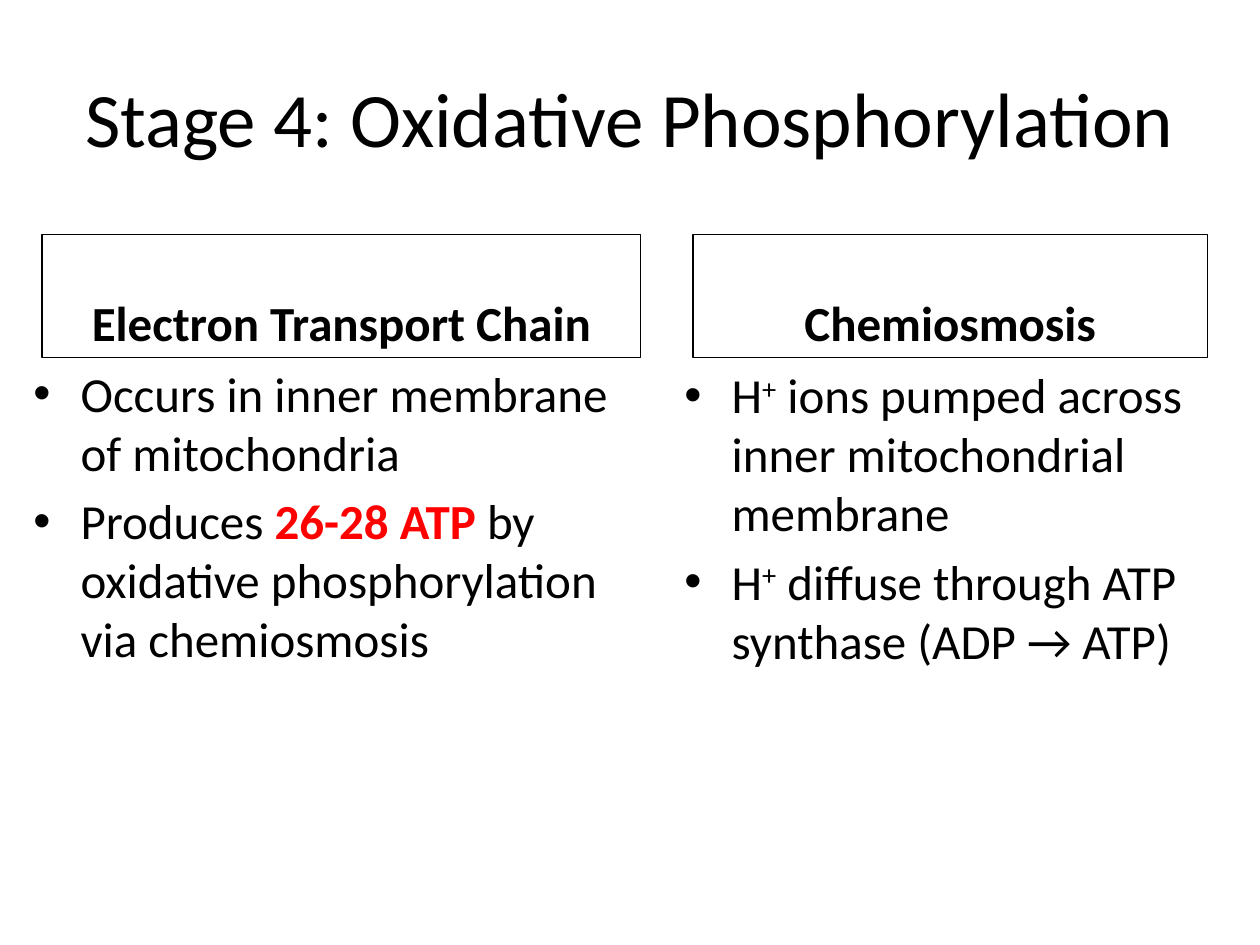
from dataclasses import dataclass

from lxml import etree
from pptx import Presentation
from pptx.dml.color import RGBColor
from pptx.enum.shapes import MSO_SHAPE
from pptx.enum.text import MSO_ANCHOR, PP_ALIGN
from pptx.oxml.ns import qn
from pptx.util import Pt

RECTANGLE = MSO_SHAPE.RECTANGLE
TOP, MIDDLE, BOTTOM = MSO_ANCHOR.TOP, MSO_ANCHOR.MIDDLE, MSO_ANCHOR.BOTTOM
LEFT, CENTER = PP_ALIGN.LEFT, PP_ALIGN.CENTER


@dataclass(frozen=True)
class Theme:
    font: str = "Calibri"
    bullet_font: str = "Arial"
    ink: RGBColor = RGBColor(0, 0, 0)
    accent: RGBColor = RGBColor(255, 0, 0)
    title_size: float = 44
    body_size: float = 28
    paragraph_gap: float = 5.6
    bullet_indent: float = 27
    border: float = 0.75


THEME = Theme()
PLAIN = {}
STRONG = {"bold": True}
HIGHLIGHT = {"bold": True, "color": THEME.accent}
SUPERSCRIPT = {"baseline": 30000}


def apply(target, formats):
    for name, value in formats.items():
        setattr(target, name, value)


def set_frame(frame, anchor):
    apply(frame, {
        "word_wrap": True, "vertical_anchor": anchor,
        "margin_left": Pt(7.2), "margin_right": Pt(7.2),
        "margin_top": Pt(3.6), "margin_bottom": Pt(3.6),
    })


def write_paragraph(paragraph, runs, size, align=LEFT, gap=0):
    apply(paragraph, {"alignment": align, "space_before": Pt(gap)})
    for words, style in runs:
        run = paragraph.add_run()
        run.text = words
        apply(run.font, {"name": THEME.font, "size": Pt(size),
                         "bold": style.get("bold", False)})
        run.font.color.rgb = style.get("color", THEME.ink)
        if "baseline" in style:
            run.font._element.set("baseline", str(style["baseline"]))


def add_bullet(paragraph):
    properties = paragraph._p.get_or_add_pPr()
    indent = Pt(THEME.bullet_indent)
    properties.set("marL", str(indent))
    properties.set("indent", str(-indent))
    etree.SubElement(properties, qn("a:buFont"), typeface=THEME.bullet_font)
    etree.SubElement(properties, qn("a:buChar"), char="•")


def add_title(slide, box, words):
    title = slide.shapes.add_textbox(*map(Pt, box)).text_frame
    set_frame(title, MIDDLE)
    write_paragraph(title.paragraphs[0], [(words, PLAIN)], THEME.title_size, CENTER)


def add_heading(slide, box, words):
    heading = slide.shapes.add_shape(RECTANGLE, *map(Pt, box))
    heading.shadow.inherit = False
    heading.fill.background()
    heading.line.color.rgb = THEME.ink
    heading.line.width = Pt(THEME.border)
    set_frame(heading.text_frame, BOTTOM)
    write_paragraph(heading.text_frame.paragraphs[0], [(words, STRONG)],
                    THEME.body_size, CENTER, THEME.paragraph_gap)


def add_points(slide, box, points):
    body = slide.shapes.add_textbox(*map(Pt, box)).text_frame
    set_frame(body, TOP)
    for index, runs in enumerate(points):
        paragraph = body.add_paragraph() if index else body.paragraphs[0]
        write_paragraph(paragraph, runs, THEME.body_size, gap=THEME.paragraph_gap)
        add_bullet(paragraph)


def add_column(slide, box, heading_width, body_offset, heading, points):
    left, top, width, height = box
    add_heading(slide, (left + 12, top, heading_width, 70.2), heading)
    add_points(slide, (left, top + body_offset, width, height - body_offset), points)


def main():
    deck = Presentation()
    apply(deck, {"slide_width": Pt(720), "slide_height": Pt(540)})
    slide = deck.slides.add_slide(deck.slide_layouts[6])

    add_title(slide, (36, 21.6, 648, 90), "Stage 4: Oxidative Phosphorylation")
    add_column(slide, (12, 134, 360, 370), 342, 70, "Electron Transport Chain", [
        [("Occurs in inner membrane of mitochondria", PLAIN)],
        [("Produces ", PLAIN), ("26-28 ATP ", HIGHLIGHT),
         ("by oxidative phosphorylation via chemiosmosis", PLAIN)],
    ])
    add_column(slide, (384, 134, 318, 382), 294, 71, "Chemiosmosis", [
        [("H", PLAIN), ("+", SUPERSCRIPT), (tail, PLAIN)]
        for tail in (" ions pumped across inner mitochondrial membrane",
                     " diffuse through ATP synthase (ADP → ATP)")
    ])
    deck.save("out.pptx")


if __name__ == "__main__":
    main()
